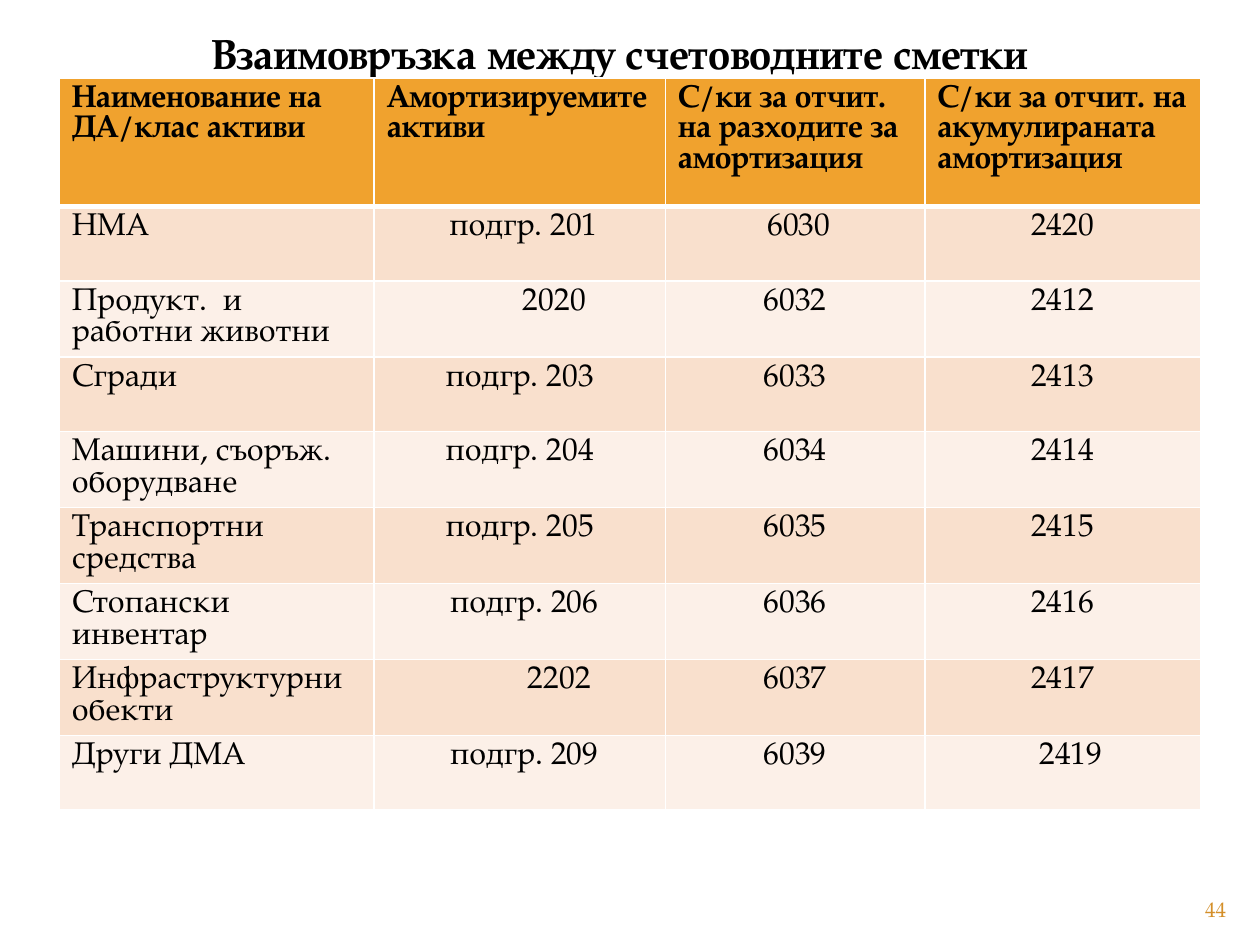
"""Build a slide with a table of linked depreciation accounts."""
from dataclasses import dataclass

from lxml.etree import SubElement
from pptx import Presentation
from pptx.dml.color import RGBColor
from pptx.enum.text import MSO_ANCHOR, MSO_AUTO_SIZE, PP_ALIGN
from pptx.oxml.ns import qn
from pptx.util import Inches, Pt


@dataclass(frozen=True)
class Theme:
    face: str = "TeX Gyre Pagella"
    ink: str = "000000"
    line: str = "FFFFFF"
    head: str = "F0A22E"
    odd: str = "F9E0CD"
    even: str = "FCF0E8"
    page: str = "D48F29"
    title: int = 24
    body: int = 18
    small: int = 12


theme = Theme()


def write(frame, text, size, color, align, bold=False):
    frame.text = text
    frame.word_wrap = True
    par = frame.paragraphs[0]
    par.alignment = align
    par.font.name = theme.face
    par.font.size = Pt(size)
    par.font.bold = bold
    par.font.color.rgb = RGBColor.from_string(color)
    return par


def border(cell, side, width):
    props = cell._tc.get_or_add_tcPr()
    line = SubElement(props, qn(f"a:ln{side}"), w=str(Pt(width)))
    fill = SubElement(line, qn("a:solidFill"))
    SubElement(fill, qn("a:srgbClr"), val=theme.line)


deck = Presentation()
deck.slide_width, deck.slide_height = Inches(10), Inches(7.5)
slide = deck.slides.add_slide(deck.slide_layouts[5])

title = slide.shapes.title
title.left, title.top = Inches(0.12), Inches(0.13)
title.width, title.height = Inches(9.6), Inches(7.25)
frame = title.text_frame
frame.auto_size = MSO_AUTO_SIZE.NONE
frame.vertical_anchor = MSO_ANCHOR.TOP
par = write(frame, "Взаимовръзка между счетоводните сметки",
            theme.title, theme.ink, PP_ALIGN.CENTER, True)
par.line_spacing = 1.1
par.space_before = Pt(6)

rows = [
    ("Наименование на ДА/клас активи", "Амортизируемите активи",
     "С/ки за отчит. на разходите за амортизация",
     "С/ки за отчит. на акумулираната амортизация"),
    ("НМА", "подгр. 201", "6030", "2420"),
    ("Продукт.  и работни животни", "2020", "6032", "2412"),
    ("Сгради", "подгр. 203", "6033", "2413"),
    ("Машини, съоръж. оборудване", "подгр. 204", "6034", "2414"),
    ("Транспортни средства", "подгр. 205", "6035", "2415"),
    ("Стопански инвентар", "подгр. 206", "6036", "2416"),
    ("Инфраструктурни обекти", "2202", "6037", "2417"),
    ("Други ДМА", "подгр. 209", "6039", "2419"),
]
widths = [2.5, 2.31, 2.06, 2.19]
tall, short = 1.02, 0.59
shifts = {"подгр. 201": 0.06, "6030": 0.06, "2020": 0.55, "2202": 0.63,
          "подгр. 206": 0.07, "подгр. 209": 0.07, "2419": 0.13}

table = slide.shapes.add_table(
    len(rows), len(widths), Inches(0.47), Inches(0.62),
    Inches(sum(widths)), Inches(tall + short * (len(rows) - 1))).table
for col, width in zip(table.columns, widths):
    col.width = Inches(width)

for r, row in enumerate(rows):
    top = r == 0
    table.rows[r].height = Inches(tall if top else short)
    fill = theme.head if top else theme.odd if r % 2 else theme.even
    for c, text in enumerate(row):
        cell = table.cell(r, c)
        align = PP_ALIGN.LEFT if top or c == 0 else PP_ALIGN.CENTER
        write(cell.text_frame, text, theme.body, theme.ink, align, top)
        cell.margin_left = Inches(0.1 + shifts.get(text, 0))
        for side in "LRTB":
            heavy = (top and side == "B") or (r == 1 and side == "T")
            border(cell, side, 3 if heavy else 1)
        cell.fill.solid()
        cell.fill.fore_color.rgb = RGBColor.from_string(fill)

page = slide.shapes.add_textbox(Inches(9), Inches(7.08), Inches(0.83), Inches(0.27))
page.text_frame.vertical_anchor = MSO_ANCHOR.MIDDLE
write(page.text_frame, "44", theme.small, theme.page, PP_ALIGN.RIGHT)

deck.save("out.pptx")
